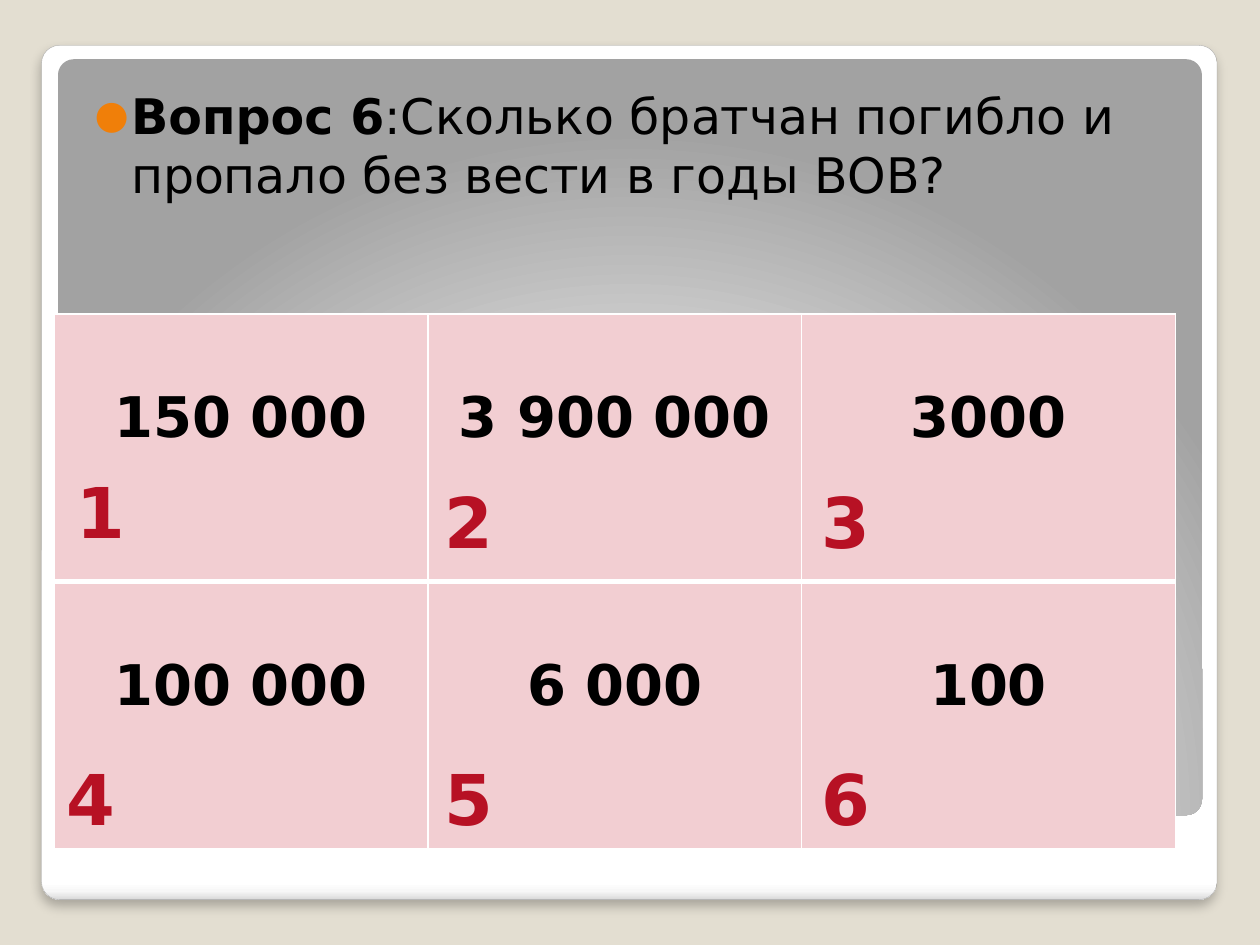
from dataclasses import dataclass

from lxml import etree
from pptx import Presentation
from pptx.dml.color import RGBColor
from pptx.enum.shapes import MSO_SHAPE
from pptx.enum.text import MSO_ANCHOR, MSO_AUTO_SIZE, PP_ALIGN
from pptx.oxml import parse_xml
from pptx.oxml.ns import nsdecls, qn
from pptx.util import Inches, Pt

ROUNDED = MSO_SHAPE.ROUNDED_RECTANGLE
TOP = MSO_ANCHOR.TOP
CENTER = PP_ALIGN.CENTER
NO_AUTOFIT = MSO_AUTO_SIZE.NONE


@dataclass(frozen=True)
class Theme:
    font: str = "DejaVu Sans"
    background: str = "E3DED1"
    frame_line: str = "A4A4A4"
    shadow: str = "000000"
    text: str = "000000"
    bullet: str = "F07F09"
    cell: str = "F2CED2"
    border: str = "FFFFFF"
    number: str = "B71124"
    frame_stops: tuple = ((0, "FFFFFF"), (98, "FFFFFF"), (99, "F7F7F7"), (100, "DADADA"))
    panel_stops: tuple = ((0, "FFFFFF"), (55, "E1E1E1"), (100, "A2A2A2"))
    question_size: int = 28
    answer_size: int = 32
    number_size: int = 40


def apply(target, values):
    for name, value in values.items():
        setattr(target, name, value)


class QuizSlide:
    def __init__(self, slide, theme):
        self.slide = slide
        self.theme = theme
        fill = slide.background.fill
        fill.solid()
        fill.fore_color.rgb = RGBColor.from_string(theme.background)

    def add_text(self, paragraph, text, size, color, bold=True):
        run = paragraph.add_run()
        run.text = text
        apply(run.font, {"name": self.theme.font, "size": Pt(size), "bold": bold})
        run.font.color.rgb = RGBColor.from_string(color)

    def panel(self, box, stops, direction):
        shape = self.slide.shapes.add_shape(ROUNDED, *map(Inches, box))
        shape.adjustments[0] = 0.021
        shape.shadow.inherit = False
        shape.line.fill.background()
        shape.fill.gradient()
        stop_xml = "".join(
            f'<a:gs pos="{position * 1000}"><a:srgbClr val="{color}"/></a:gs>'
            for position, color in stops
        )
        gradient = parse_xml(
            f'<a:gradFill {nsdecls("a")} rotWithShape="1">'
            f"<a:gsLst>{stop_xml}</a:gsLst>{direction}</a:gradFill>"
        )
        properties = shape.element.spPr
        properties.replace(properties.find(qn("a:gradFill")), gradient)
        return shape

    def frame(self, box):
        shape = self.panel(box, self.theme.frame_stops, '<a:lin ang="5400000" scaled="0"/>')
        shape.line.color.rgb = RGBColor.from_string(self.theme.frame_line)
        shape.line.width = Pt(0.16)
        shape.element.spPr.find(qn("a:effectLst")).append(parse_xml(
            f'<a:outerShdw {nsdecls("a")} blurRad="{Pt(6)}" dist="{Pt(4)}" dir="5400000">'
            f'<a:srgbClr val="{self.theme.shadow}"><a:alpha val="25000"/></a:srgbClr>'
            "</a:outerShdw>"
        ))

    def inner_panel(self, box):
        self.panel(
            box,
            self.theme.panel_stops,
            '<a:path path="circle"><a:fillToRect l="50000" t="175000" r="50000" b="-75000"/></a:path>',
        )

    def question(self, box, label, text):
        title = self.slide.shapes.title.element
        title.getparent().remove(title)
        body = self.slide.placeholders[1]
        self.slide.shapes.element.append(body.element)
        apply(body, dict(zip(("left", "top", "width", "height"), map(Inches, box))))
        apply(body.text_frame, {
            "margin_left": Inches(0.2),
            "margin_top": Inches(0.1),
            "margin_right": Inches(0.1),
            "margin_bottom": Inches(0.05),
            "vertical_anchor": TOP,
            "auto_size": NO_AUTOFIT,
            "word_wrap": True,
        })
        paragraph = body.text_frame.paragraphs[0]
        paragraph.space_before = Pt(2.5)
        size, color = self.theme.question_size, self.theme.text
        self.add_text(paragraph, label, size, color)
        self.add_text(paragraph, text, size, color, bold=False)
        properties = paragraph._p.get_or_add_pPr()
        properties.set("marL", str(Inches(0.29)))
        properties.set("indent", str(-Inches(0.29)))
        bullet_color = etree.SubElement(properties, qn("a:buClr"))
        etree.SubElement(bullet_color, qn("a:srgbClr"), val=self.theme.bullet)
        etree.SubElement(properties, qn("a:buSzPct"), val="80000")
        etree.SubElement(properties, qn("a:buFont"), typeface=self.theme.font)
        etree.SubElement(properties, qn("a:buChar"), char="●")

    def border(self, cell, widths):
        properties = cell._tc.get_or_add_tcPr()
        for index, (side, width) in enumerate(widths.items()):
            properties.insert(index, parse_xml(
                f'<a:ln{side} {nsdecls("a")} w="{Pt(width)}"><a:solidFill>'
                f'<a:srgbClr val="{self.theme.border}"/></a:solidFill></a:ln{side}>'
            ))

    def answers(self, box, rows):
        frame = self.slide.shapes.add_table(len(rows), len(rows[0]), *map(Inches, box))
        for row_index, row in enumerate(rows):
            for column_index, answer in enumerate(row):
                cell = frame.table.cell(row_index, column_index)
                cell.fill.solid()
                cell.fill.fore_color.rgb = RGBColor.from_string(self.theme.cell)
                apply(cell, {"margin_top": Inches(0.57), "vertical_anchor": TOP})
                paragraph = cell.text_frame.paragraphs[0]
                paragraph.alignment = CENTER
                self.add_text(paragraph, answer, self.theme.answer_size, self.theme.text)
                self.border(cell, {
                    "L": 1,
                    "R": 1,
                    "T": 3 if row_index else 1,
                    "B": 1 if row_index else 3,
                })

    def number(self, box, text):
        label = self.slide.shapes.add_textbox(*map(Inches, box))
        label.text_frame.word_wrap = True
        self.add_text(label.text_frame.paragraphs[0], text, self.theme.number_size, self.theme.number)


def main():
    presentation = Presentation()
    apply(presentation, {"slide_width": Inches(10), "slide_height": Inches(7.5)})
    quiz = QuizSlide(presentation.slides.add_slide(presentation.slide_layouts[1]), Theme())
    quiz.frame((0.33, 0.36, 9.33, 6.78))
    quiz.inner_panel((0.46, 0.47, 9.08, 6))
    quiz.question(
        (0.55, 0.58, 8.95, 4.58),
        "Вопрос 6",
        ":Сколько братчан погибло и пропало без вести в годы ВОВ?",
    )
    quiz.answers(
        (0.43, 2.49, 8.9, 4.25),
        [("150 000", "3 900 000", "3000"), ("100 000", "6 000", "100")],
    )
    number_places = [
        (0.51, 3.67, 0.71), (3.43, 3.75, 0.79), (6.42, 3.75, 0.55),
        (0.43, 5.95, 0.55), (3.43, 5.95, 0.55), (6.42, 5.95, 0.55),
    ]
    for number, place in enumerate(number_places, start=1):
        quiz.number((*place, 0.77), str(number))
    presentation.save("out.pptx")


if __name__ == "__main__":
    main()
